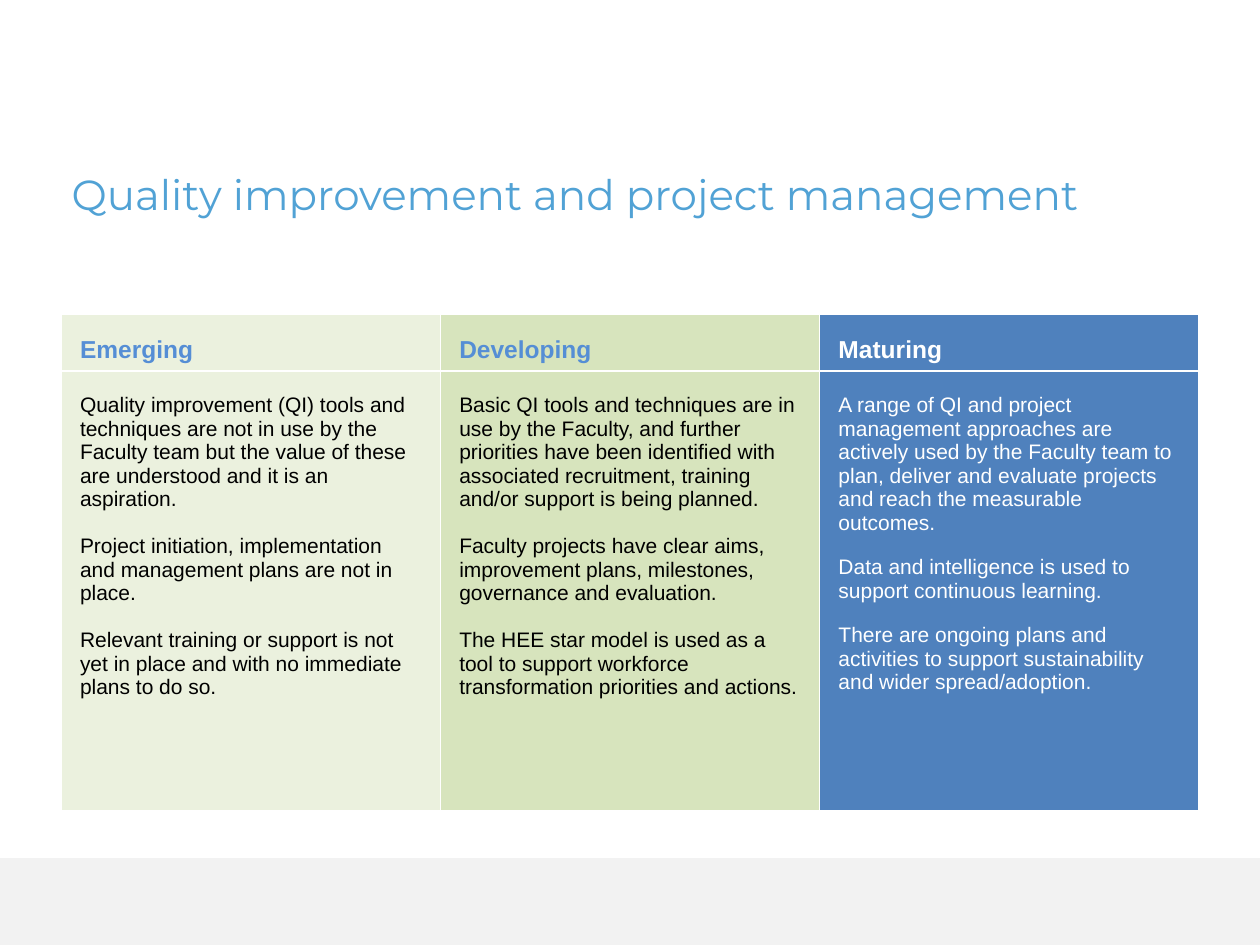
from dataclasses import dataclass

from lxml import etree
from pptx import Presentation
from pptx.dml.color import RGBColor
from pptx.enum.shapes import MSO_SHAPE
from pptx.oxml.ns import qn
from pptx.util import Inches, Pt

RECTANGLE = MSO_SHAPE.RECTANGLE


@dataclass(frozen=True)
class Theme:
    title_font: str = "Montserrat"
    body_font: str = "Arial"
    title_size: float = 24
    heading_size: float = 14
    body_size: float = 12
    title: str = "51A2D5"
    heading: str = "558ED5"
    body: str = "000000"
    light: str = "FFFFFF"
    footer: str = "F2F2F2"
    emerging: str = "EBF1DE"
    developing: str = "D7E4BD"
    maturing: str = "4F81BD"


@dataclass(frozen=True)
class Stage:
    name: str
    fill: str
    heading_color: str
    body_color: str
    gap: float
    points: tuple


class SlideBuilder:
    """Holds the theme and current slide; lengths are percentages of the slide."""

    def __init__(self, deck, theme):
        self.deck = deck
        self.theme = theme
        self.slide = deck.slides.add_slide(deck.slide_layouts[6])

    def across(self, percent):
        return round(self.deck.slide_width * percent / 100)

    def down(self, percent):
        return round(self.deck.slide_height * percent / 100)

    def place(self, left, top, width, height):
        return self.across(left), self.down(top), self.across(width), self.down(height)

    def style(self, paragraph, font, size, color, bold=False):
        for run in paragraph.runs:
            run.font.name = font
            run.font.size = Pt(size)
            run.font.bold = bold
            run.font.color.rgb = RGBColor.from_string(color)

    def band(self, area, color):
        band = self.slide.shapes.add_shape(RECTANGLE, *self.place(*area))
        band.shadow.inherit = False
        band.fill.solid()
        band.fill.fore_color.rgb = RGBColor.from_string(color)
        band.line.fill.background()

    def title(self, area, text):
        frame = self.slide.shapes.add_textbox(*self.place(*area)).text_frame
        frame.word_wrap = True
        frame.text = text
        self.style(frame.paragraphs[0], self.theme.title_font,
                   self.theme.title_size, self.theme.title)

    def cell(self, cell, fill, paragraphs, size, color, bold=False, gap=0):
        cell.margin_left = cell.margin_right = Inches(0.15)
        cell.margin_top, cell.margin_bottom = Inches(0.18), Inches(0.04)
        cell.text_frame.text = "\n".join(paragraphs)
        for index, paragraph in enumerate(cell.text_frame.paragraphs):
            if index:
                paragraph.space_before = Pt(gap)
            self.style(paragraph, self.theme.body_font, size, color, bold)
        cell.fill.solid()
        cell.fill.fore_color.rgb = RGBColor.from_string(fill)
        self.borders(cell)

    def borders(self, cell):
        properties = cell._tc.get_or_add_tcPr()
        for index, side in enumerate(("a:lnL", "a:lnR", "a:lnT", "a:lnB")):
            line = etree.Element(qn(side), w=str(Pt(1)))
            paint = etree.SubElement(line, qn("a:solidFill"))
            etree.SubElement(paint, qn("a:srgbClr"), val=self.theme.light)
            properties.insert(index, line)

    def stage_table(self, left, top, width, row_heights, stages):
        area = self.place(left, top, width, sum(row_heights))
        table = self.slide.shapes.add_table(len(row_heights), len(stages), *area).table
        table.first_row = table.horz_banding = False
        for row, height in zip(table.rows, row_heights):
            row.height = self.down(height)
        for column, stage in enumerate(stages):
            self.cell(table.cell(0, column), stage.fill, [stage.name],
                      self.theme.heading_size, stage.heading_color, bold=True)
            self.cell(table.cell(1, column), stage.fill, stage.points,
                      self.theme.body_size, stage.body_color, gap=stage.gap)


def main():
    deck = Presentation()
    deck.slide_width, deck.slide_height = Inches(10), Inches(7.5)
    theme = Theme()
    builder = SlideBuilder(deck, theme)

    # Maturity stages, one per column
    stages = (
        Stage("Emerging", theme.emerging, theme.heading, theme.body, 13.4, (
            "Quality improvement (QI) tools and techniques are not in use by the "
            "Faculty team but the value of these are understood and it is an aspiration.",
            "Project initiation, implementation and management plans are not in place.",
            "Relevant training or support is not yet in place and with no immediate "
            "plans to do so.",
        )),
        Stage("Developing", theme.developing, theme.heading, theme.body, 13.4, (
            "Basic QI tools and techniques are in use by the Faculty, and "
            "further priorities have been identified with associated recruitment, "
            "training and/or support is being planned.",
            "Faculty projects have clear aims, improvement plans, milestones, "
            "governance and evaluation.",
            "The HEE star model is used as a tool to support workforce "
            "transformation priorities and actions.",
        )),
        Stage("Maturing", theme.maturing, theme.light, theme.light, 12, (
            "A range of QI and project management approaches are actively "
            "used by the Faculty team to plan, deliver and evaluate projects and "
            "reach the measurable outcomes.",
            "Data and intelligence is used to support continuous learning.",
            "There are ongoing plans and activities to support sustainability and "
            "wider spread/adoption.",
        )),
    )

    # Footer band, title and table
    builder.band((0, 90.8, 100, 9.2), theme.footer)
    builder.title((4.7, 17.2, 89.6, 6.7), "Quality improvement and project management")
    builder.stage_table(4.85, 33.2, 90.3, (5.85, 46.55), stages)

    deck.save("out.pptx")


if __name__ == "__main__":
    main()
